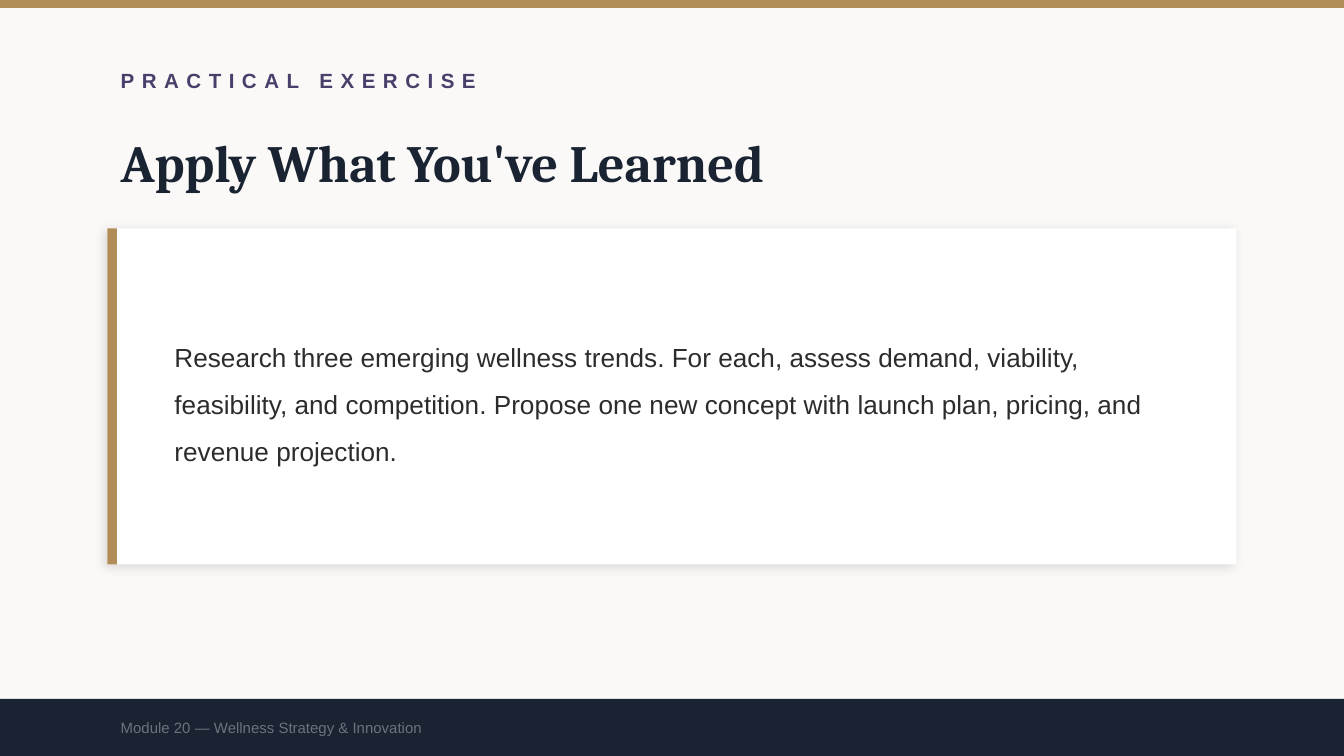
from dataclasses import dataclass

from lxml import etree
from pptx import Presentation
from pptx.dml.color import RGBColor
from pptx.enum.shapes import MSO_SHAPE
from pptx.enum.text import MSO_ANCHOR
from pptx.oxml.ns import qn
from pptx.util import Pt

RECT = MSO_SHAPE.RECTANGLE
MIDDLE = MSO_ANCHOR.MIDDLE

GOLD, NAVY, WHITE = "B08D57", "1A2332", "FFFFFF"
W, H = 720, 405
MARGIN = 57.6
TEXT_W = 576
CARD_TOP, CARD_H = 122.4, 180
FOOTER_TOP = 374.4
FOOTER_H = H - FOOTER_TOP


@dataclass
class Box:
    left: float
    top: float
    width: float
    height: float

    def lengths(self) -> list:
        return [Pt(v) for v in (self.left, self.top, self.width, self.height)]


@dataclass
class Panel:
    box: Box
    color: str
    shadow: bool = False


@dataclass
class Label:
    box: Box
    text: str
    size: float
    color: str
    font: str = "Arial"
    bold: bool = False
    tracking: float = 0
    line_spacing: float = 1.0


def rgb(value: str) -> RGBColor:
    return RGBColor.from_string(value)


def add_soft_shadow(sp) -> None:
    """Fill the shape's effect list with a faint outer shadow."""
    effects = sp._element.spPr.find(qn("a:effectLst"))
    shadow = etree.SubElement(
        effects, qn("a:outerShdw"), blurRad=str(Pt(6)), dist=str(Pt(2)),
        dir=str(135 * 60000), algn="bl", rotWithShape="0")
    color = etree.SubElement(shadow, qn("a:srgbClr"), val="000000")
    etree.SubElement(color, qn("a:alpha"), val="12000")


def draw_panel(slide, panel: Panel) -> None:
    sp = slide.shapes.add_shape(RECT, *panel.box.lengths())
    sp.shadow.inherit = False
    sp.fill.solid()
    sp.fill.fore_color.rgb = rgb(panel.color)
    sp.line.fill.background()
    if panel.shadow:
        add_soft_shadow(sp)


def draw_label(slide, label: Label) -> None:
    tf = slide.shapes.add_textbox(*label.box.lengths()).text_frame
    tf.word_wrap = True
    tf.vertical_anchor = MIDDLE
    tf.text = label.text
    p = tf.paragraphs[0]
    if label.line_spacing != 1:
        p.line_spacing = label.line_spacing
    r = p.runs[0]
    r.font.name = label.font
    r.font.size = Pt(label.size)
    r.font.bold = label.bold
    r.font.color.rgb = rgb(label.color)
    if label.tracking:
        r.font._element.set("spc", str(int(label.tracking * 100)))


ITEMS = [
    Panel(Box(0, 0, W, 4.32), GOLD),
    Label(Box(MARGIN, 28.8, TEXT_W, 28.8), "PRACTICAL EXERCISE", 11, "4A3F6B",
          bold=True, tracking=4),
    Label(Box(MARGIN, 64.8, TEXT_W, 43.2), "Apply What You've Learned", 28, NAVY,
          font="Cambria", bold=True),
    Panel(Box(MARGIN, CARD_TOP, W - 2 * MARGIN, CARD_H), WHITE, shadow=True),
    Panel(Box(MARGIN, CARD_TOP, 5.04, CARD_H), GOLD),
    Label(Box(86.4, CARD_TOP + 14.4, 554.4, CARD_H - 28.8),
          "Research three emerging wellness trends. For each, assess demand, "
          "viability, feasibility, and competition. Propose one new concept "
          "with launch plan, pricing, and revenue projection.",
          14, "2C2C2C", line_spacing=1.5),
    Panel(Box(0, FOOTER_TOP, W, FOOTER_H), NAVY),
    Label(Box(MARGIN, FOOTER_TOP, TEXT_W, FOOTER_H),
          "Module 20 — Wellness Strategy & Innovation", 8, "6B7280"),
]


def main() -> None:
    prs = Presentation()
    prs.slide_width, prs.slide_height = Pt(W), Pt(H)
    slide = prs.slides.add_slide(prs.slide_layouts[6])
    slide.background.fill.solid()
    slide.background.fill.fore_color.rgb = rgb("FAF9F7")
    for item in ITEMS:
        if isinstance(item, Panel):
            draw_panel(slide, item)
        else:
            draw_label(slide, item)
    prs.save("out.pptx")


if __name__ == "__main__":
    main()
